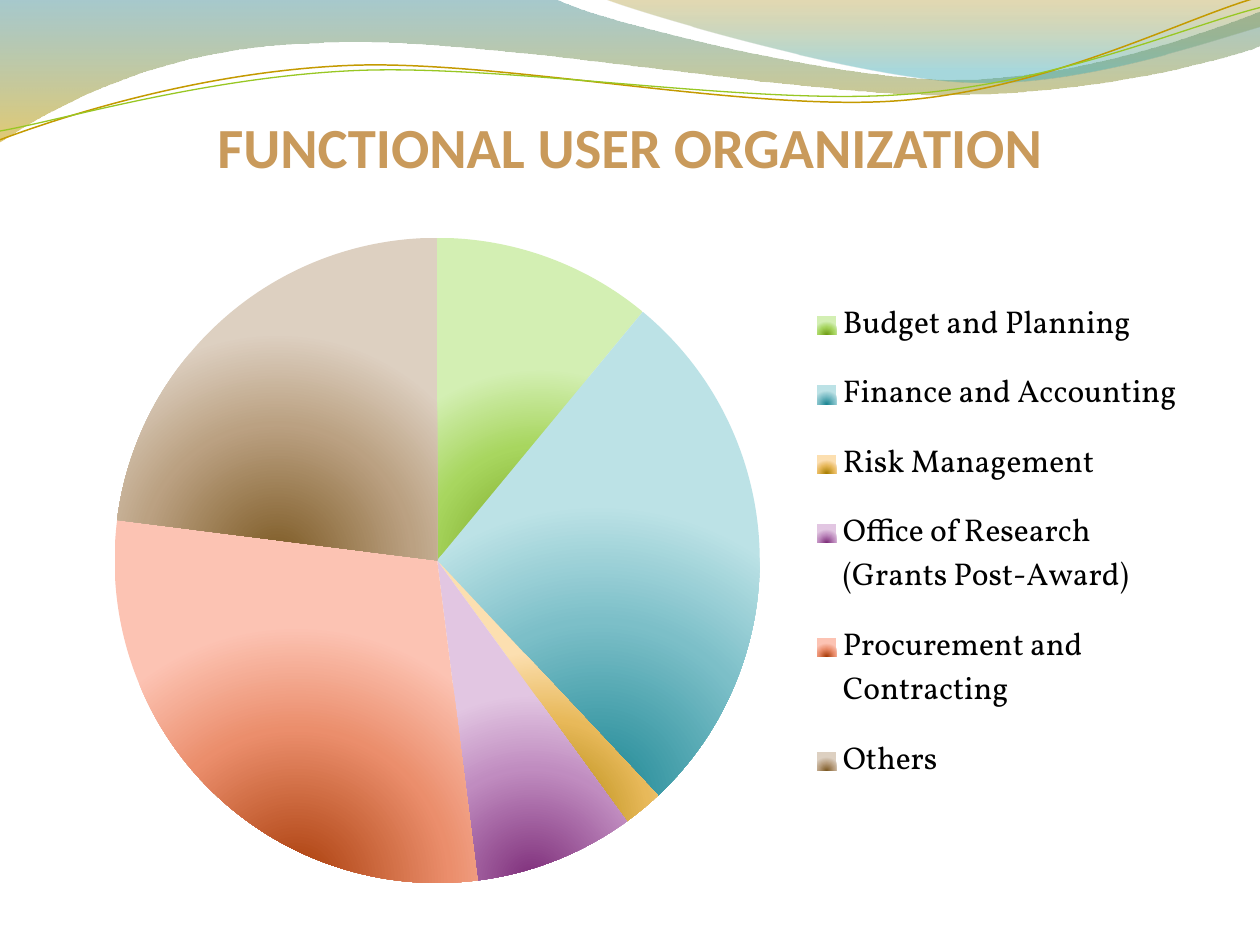
from pptx import Presentation, util as u
from pptx.chart.data import CategoryChartData
from pptx.dml.color import RGBColor
from pptx.enum import chart as charts, text
from pptx.oxml import parse_xml
from pptx.oxml.ns import nsdecls, qn

COLORS = {
    "title": "C99A5B", "text": "000000", "gold": "C49A00", "lime": "98C723",
    "wave_top": "3B8890", "wave_end": "C99E00",
    "crest_top": "A48100", "crest_end": "3EA9B4",
}
LINEAR = '<a:lin ang="5400000" scaled="1"/>'
RADIAL = '<a:path path="circle"><a:fillToRect l="50000" t="100000" r="50000" b="0"/></a:path>'

# label, value, colours of its slice from the core outwards
SLICES = [
    ("Budget and Planning", 11, ("6F9C14", "A8D65F", "D3EFB3")),
    ("Finance and Accounting", 27, ("1C8794", "7CBFC8", "BCE2E6")),
    ("Risk Management", 2, ("A87F00", "E8B95A", "FCDFB0")),
    ("Office of Research (Grants Post-Award)", 8, ("7E2E7A", "C08CC0", "E2C6E2")),
    ("Procurement and Contracting", 29, ("A83C08", "EB8E6C", "FCC3B3")),
    ("Others", 23, ("7D5A24", "BBA182", "DDD0C1")),
]

# Outlines: a pair is a straight step, six numbers are a Bezier curve
WAVE = [(0, 0), (4.4, -0.01), (4.76, 0.17, 6.64, 0.63, 7.58, 0.63),
        (8.53, 0.63, 9.58, 0.26, 10, 0.09), (10.01, 0.36),
        (9.83, 0.44, 8.7, 0.76, 7.46, 0.75), (6.22, 0.75, 3.82, 0.28, 2.57, 0.34),
        (1.29, 0.36, 0.46, 0.83, -0.01, 1.13)]
CREST = [(4.79, -0.01), (5.09, 0.11, 6.82, 0.62, 7.69, 0.65),
         (8.56, 0.69, 9.61, 0.32, 10, 0.21), (10, 0)]
GOLD_LINE = [(0, 1.11), (0.48, 0.93, 1.58, 0.57, 2.77, 0.52),
             (3.95, 0.47, 5.93, 0.89, 7.13, 0.8), (8.33, 0.71, 9.38, 0.15, 9.98, -0.02)]
LIME_LINE = [(0, 1.04), (0.47, 0.96, 1.64, 0.61, 2.83, 0.56),
             (4.03, 0.51, 5.97, 0.84, 7.17, 0.75), (8.36, 0.67, 9.41, 0.21, 10, 0.06)]


def bend(shape, steps):
    """Join the three straight segments of each Bezier step into one curve."""
    segments = iter(list(shape.element.iter(qn("a:lnTo"))))
    for step in steps[1:]:
        group = [next(segments) for _ in range(len(step) // 2)]
        if len(group) == 3:
            curve = parse_xml(f'<a:cubicBezTo {nsdecls("a")}/>')
            group[0].addprevious(curve)
            for segment in group:
                curve.append(segment[0])
                segment.getparent().remove(segment)


def set_gradient(grad, stops, direction):
    """Fill a gradFill element with (position, colour, opacity) stops, in percent."""
    marks = "".join(
        f'<a:gs pos="{pos * 1000}"><a:srgbClr val="{color}">'
        f'<a:alpha val="{opacity * 1000}"/></a:srgbClr></a:gs>'
        for pos, color, opacity in stops)
    grad.clear()
    grad.extend(parse_xml(f'<a:gradFill {nsdecls("a")}><a:gsLst>{marks}</a:gsLst>'
                          f'{direction}</a:gradFill>'))


def set_layout(element, x, y, w, h, inner=False):
    """Place a plot area or legend by shares of the chart's size."""
    for old in element.findall(qn("c:layout")):
        element.remove(old)
    target = '<c:layoutTarget val="inner"/>' if inner else ""
    sizes = "".join(f'<c:{key} val="{value}"/>' for key, value in zip("xywh", (x, y, w, h)))
    layout = parse_xml(
        f'<c:layout {nsdecls("c")}><c:manualLayout>{target}<c:xMode val="edge"/>'
        f'<c:yMode val="edge"/>{sizes}</c:manualLayout></c:layout>')
    element.insert(0 if inner else 1, layout)


class Slide:
    """A page on a grid of 10 columns by 7.5 rows."""
    columns, rows = 10, 7.5
    cell = u.Inches(1)
    fine = 100  # outline units in one cell
    heading_font, body_font = "Calibri", "Vollkorn"

    def __init__(self, deck):
        deck.slide_width = self.size(self.columns)
        deck.slide_height = self.size(self.rows)
        self.page = deck.slides.add_slide(deck.slide_layouts[5])

    def size(self, cells):
        return u.Emu(round(cells * self.cell))

    def color(self, name):
        return RGBColor.from_string(COLORS[name])

    def outline(self, steps, close):
        points = [(round(step[i] * self.fine), round(step[i + 1] * self.fine))
                  for step in steps for i in range(0, len(step), 2)]
        builder = self.page.shapes.build_freeform(*points[0], scale=self.cell / self.fine)
        builder.add_line_segments(points[1:], close=close)
        shape = builder.convert_to_shape()
        shape.shadow.inherit = False
        bend(shape, steps)
        return shape

    def area(self, steps, stops):
        shape = self.outline(steps, True)
        shape.line.fill.background()
        shape.fill.gradient()
        set_gradient(shape.element.spPr.find(qn("a:gradFill")),
                     [(pos, COLORS[name], opacity) for pos, name, opacity in stops], LINEAR)

    def curve(self, steps, color, width):
        shape = self.outline(steps, False)
        shape.fill.background()
        shape.line.color.rgb = self.color(color)
        shape.line.width = u.Pt(width)

    def title(self, words, *place):
        box = self.page.shapes.title
        box.left, box.top, box.width, box.height = map(self.size, place)
        frame = box.text_frame
        frame.vertical_anchor = text.MSO_ANCHOR.BOTTOM
        frame.margin_left = frame.margin_right = frame.margin_bottom = 0
        para = frame.paragraphs[0]
        para.alignment = text.PP_ALIGN.CENTER
        span = para.add_run()
        span.text = words
        span.font.name, span.font.size, span.font.bold = self.heading_font, u.Pt(32.4), True
        span.font.color.rgb = self.color("title")

    def pie(self, slices, *place):
        data = CategoryChartData()
        data.categories = [label for label, _, _ in slices]
        data.add_series("Series 1", [value for _, value, _ in slices])
        chart = self.page.shapes.add_chart(
            charts.XL_CHART_TYPE.PIE, *map(self.size, place), data).chart
        chart.has_title = False
        chart.font.name, chart.font.size = self.body_font, u.Pt(18)
        chart.font.color.rgb = self.color("text")
        chart.has_legend = True
        chart.legend.position = charts.XL_LEGEND_POSITION.RIGHT
        chart.legend.include_in_layout = False
        plot = chart.plots[0]
        plot.vary_by_categories = True
        for i in range(len(slices)):
            look = plot.series[0].points[i].format
            look.line.fill.background()
            look.fill.gradient()
        root = chart.element
        for grad, (_, _, shades) in zip(root.iter(qn("a:gradFill")), slices):
            set_gradient(grad, [(pos, shade, 100) for pos, shade in zip((0, 60, 100), shades)],
                         RADIAL)
        set_layout(next(root.iter(qn("c:plotArea"))), 0.04, 0.02, 0.58, 0.95, inner=True)
        set_layout(next(root.iter(qn("c:legend"))), 0.67, 0.08, 0.32, 0.78)


def main():
    deck = Presentation()
    slide = Slide(deck)
    slide.area(WAVE, [(0, "wave_top", 45), (100, "wave_end", 55)])
    slide.area(CREST, [(0, "crest_top", 30), (80, "crest_end", 45)])
    slide.curve(GOLD_LINE, "gold", 0.85)
    slide.curve(LIME_LINE, "lime", 0.75)
    slide.title("FUNCTIONAL USER ORGANIZATION", 0.5, 0.79, 9, 0.64)
    slide.pie(SLICES, 0.5, 1.78, 9, 5.39)
    deck.save("out.pptx")


if __name__ == "__main__":
    main()
